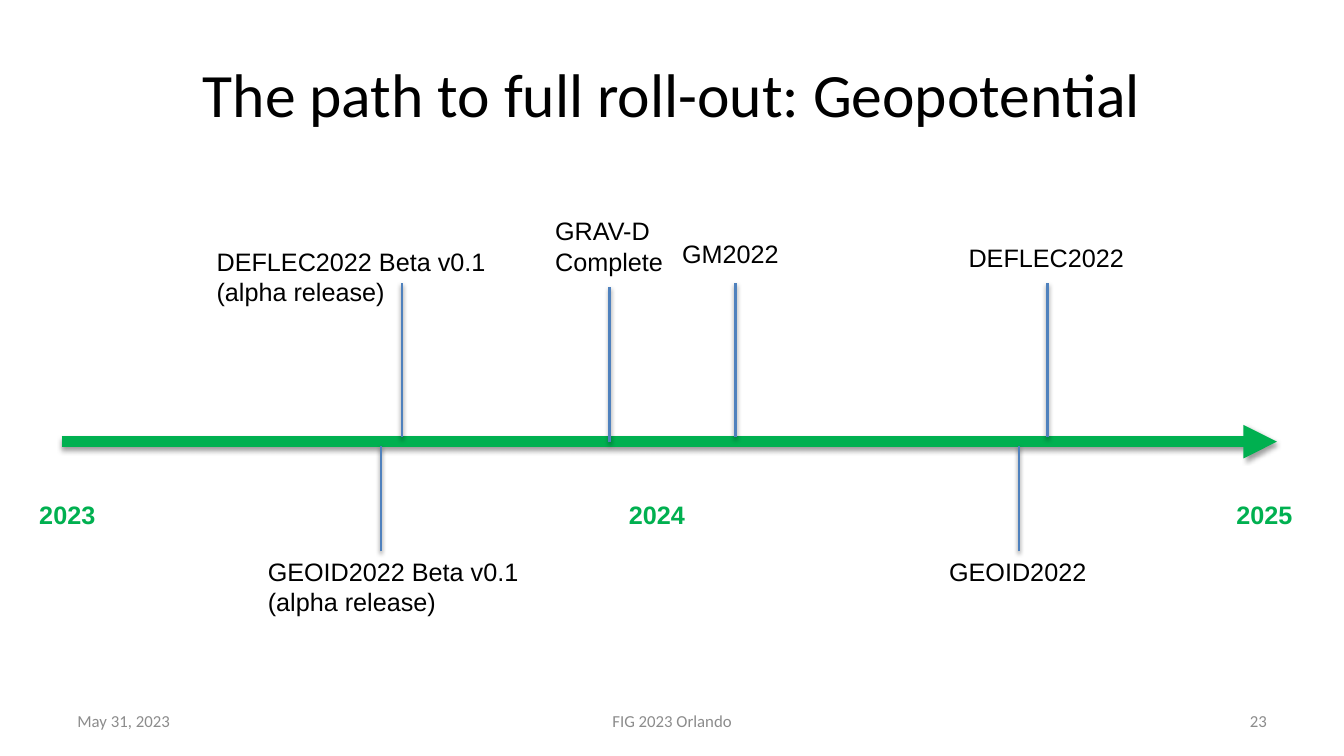
import dataclasses

import lxml.etree
import pptx
import pptx.dml.color
import pptx.enum.shapes
import pptx.enum.text
import pptx.oxml.ns
import pptx.util

Cm = pptx.util.Cm
Pt = pptx.util.Pt
RGBColor = pptx.dml.color.RGBColor
Align = pptx.enum.text.PP_ALIGN
Anchor = pptx.enum.text.MSO_ANCHOR

BLACK = RGBColor(0x00, 0x00, 0x00)
GREEN = RGBColor(0x00, 0xB0, 0x50)
BLUE = RGBColor(0x4F, 0x81, 0xBD)
GREY = RGBColor(0x8C, 0x8C, 0x8C)

LINE_HEIGHT = 0.76
LABEL_PADDING = 0.26


@dataclasses.dataclass
class Box:
    """A region of the slide, measured in centimetres."""
    left: float
    top: float
    width: float
    height: float

    def inner(self, left, top, width, height):
        return Box(self.left + left, self.top + top, width, height)

    def lengths(self):
        return [Cm(side) for side in (self.left, self.top, self.width, self.height)]


@dataclasses.dataclass
class Milestone:
    """A label and its stem; offsets are from the timeline box."""
    text: str
    label_left: float
    label_top: float
    label_width: float
    stem: float
    stem_start: float
    stem_end: float


MILESTONES = [
    Milestone("GEOID2022 Beta v0.1\n(alpha release)", 4.95, 8.58, 6.88, 8.05, 8.58, 5.92),
    Milestone("GRAV-D\nComplete", 12.19, 0, 3.25, 13.82, 5.84, 1.93),
    Milestone("DEFLEC2022", 22.61, 0.68, 4.47, 24.84, 5.71, 1.83),
    Milestone("GEOID2022", 22.12, 8.58, 4.01, 24.13, 8.58, 5.92),
    Milestone("GM2022", 15.39, 0.58, 2.97, 16.99, 5.71, 1.83),
    Milestone("DEFLEC2022 Beta v0.1\n(alpha release)", 3.66, 0.76, 7.34, 8.58, 5.71, 1.83),
]
YEARS = {"2023": -0.81, "2024": 14.05, "2025": 29.36}


def format_text(frame, size, font_name, color, align=Align.LEFT, bold=False):
    for para in frame.paragraphs:
        para.alignment = align
        for span in para.runs:
            span.font.size = Pt(size)
            span.font.name = font_name
            span.font.color.rgb = color
            span.font.bold = bold


def add_label(page, box, text, color=BLACK, bold=False):
    label = page.shapes.add_textbox(*box.lengths())
    frame = label.text_frame
    frame.word_wrap = False
    frame.auto_size = pptx.enum.text.MSO_AUTO_SIZE.SHAPE_TO_FIT_TEXT
    frame.text = text
    format_text(frame, 18, "Arial", color, bold=bold)


def add_shadow(connector):
    properties = connector._element.spPr
    qn = pptx.oxml.ns.qn
    effects = lxml.etree.SubElement(properties, qn("a:effectLst"))
    shadow = lxml.etree.SubElement(
        effects, qn("a:outerShdw"), blurRad="40000", dist="20000",
        dir="5400000", rotWithShape="0")
    color = lxml.etree.SubElement(shadow, qn("a:srgbClr"), val="000000")
    lxml.etree.SubElement(color, qn("a:alpha"), val="38000")


def add_line(page, start, end, color, width):
    line = page.shapes.add_connector(
        pptx.enum.shapes.MSO_CONNECTOR.STRAIGHT,
        *[Cm(value) for value in (*start, *end)])
    line.line.color.rgb = color
    line.line.width = Pt(width)
    add_shadow(line)
    return line


def add_title(page, box):
    title = page.shapes.title
    title.left, title.top, title.width, title.height = box.lengths()
    title.text_frame.text = "The path to full roll-out: Geopotential"
    title.text_frame.vertical_anchor = Anchor.MIDDLE
    format_text(title.text_frame, 44, "Calibri", BLACK, Align.CENTER)


def add_footer(page, box):
    side, middle = 7.9, 10.72
    parts = [
        ("May 31, 2023", 0, side, Align.LEFT),
        ("FIG 2023 Orlando", (box.width - middle) / 2, middle, Align.CENTER),
        ("23", box.width - side, side, Align.RIGHT),
    ]
    for text, left, width, align in parts:
        part = page.shapes.add_textbox(*box.inner(left, 0, width, box.height).lengths())
        frame = part.text_frame
        frame.word_wrap = True
        frame.vertical_anchor = Anchor.MIDDLE
        frame.text = text
        format_text(frame, 12, "Calibri", GREY, align)


def add_axis(page, box):
    middle = box.top + 5.82
    axis = add_line(page, (box.left, middle), (box.left + box.width, middle), GREEN, 8)
    lxml.etree.SubElement(
        axis.line._get_or_add_ln(), pptx.oxml.ns.qn("a:tailEnd"), type="triangle")
    for year, left in YEARS.items():
        add_label(page, box.inner(left, 7.16, 1.93, 1.02), year, GREEN, bold=True)


def add_milestone(page, box, milestone):
    stem = box.left + milestone.stem
    add_line(page, (stem, box.top + milestone.stem_start),
             (stem, box.top + milestone.stem_end), BLUE, 2)
    line_count = len(milestone.text.splitlines())
    height = LABEL_PADDING + LINE_HEIGHT * line_count
    label_box = box.inner(milestone.label_left, milestone.label_top,
                          milestone.label_width, height)
    add_label(page, label_box, milestone.text)


def add_timeline(page, box):
    add_axis(page, box)
    for milestone in MILESTONES:
        add_milestone(page, box, milestone)


def main():
    deck = pptx.Presentation()
    deck.slide_width, deck.slide_height = Cm(33.87), Cm(19.05)
    page = deck.slides.add_slide(deck.slide_layouts.get_by_name("Title Only"))
    add_title(page, Box(1.7, 0.76, 30.48, 3.18))
    add_footer(page, Box(1.7, 17.65, 30.48, 1.02))
    add_timeline(page, Box(1.55, 5.31, 30.63, 10.4))
    deck.save("out.pptx")


if __name__ == "__main__":
    main()
